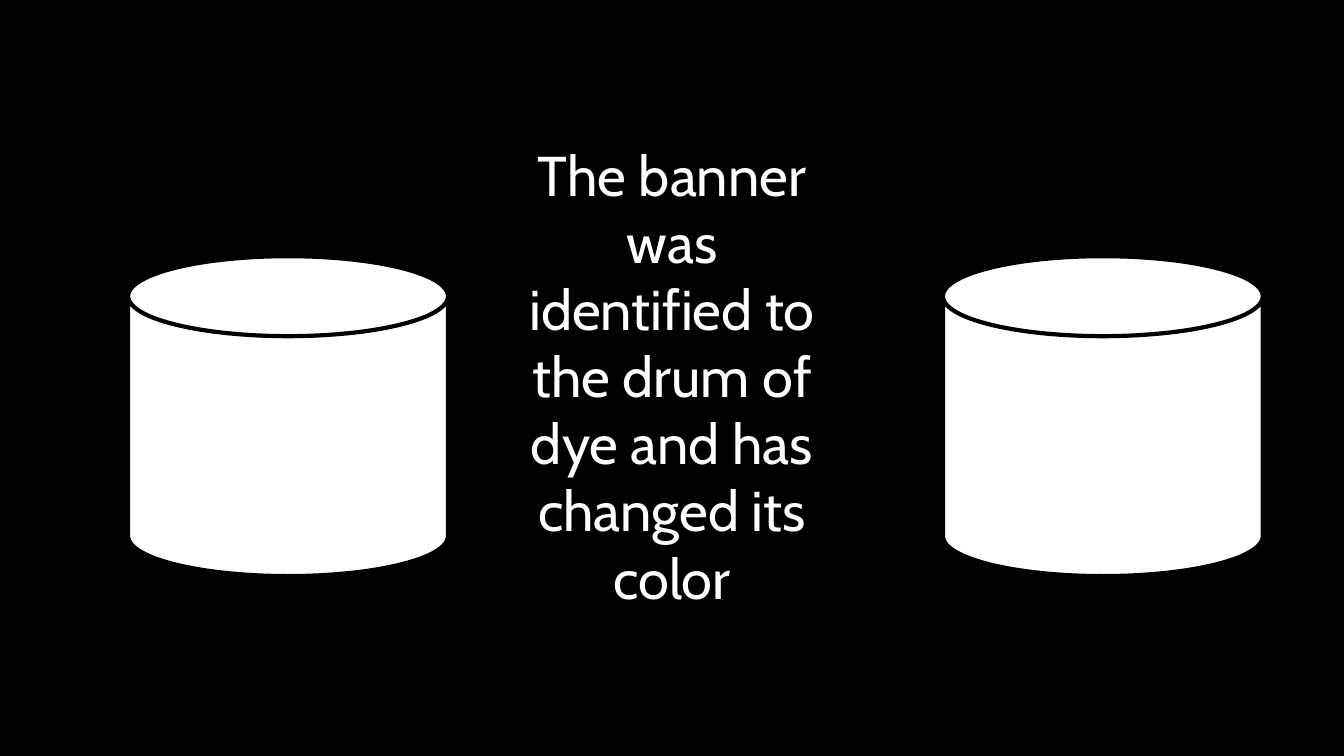
from pptx import Presentation
from pptx.dml.color import RGBColor
from pptx.enum.shapes import MSO_SHAPE
from pptx.enum.text import MSO_AUTO_SIZE, PP_ALIGN
from pptx.util import Pt

BLACK, WHITE = "000000", "FFFFFF"


def rgb(hex_color):
    return RGBColor.from_string(hex_color)


class SlideBuilder:
    font = "Cabin"
    text_size = 40
    outline = 3

    def __init__(self, s):
        self.s = s

    def background(self, color):
        fill = self.s.background.fill
        fill.solid()
        fill.fore_color.rgb = rgb(color)

    def drum(self, x, y, size):
        sp = self.s.shapes.add_shape(
            MSO_SHAPE.CAN, Pt(x), Pt(y), Pt(size), Pt(size))
        sp.adjustments[0] = 0.25
        sp.shadow.inherit = False
        sp.fill.solid()
        sp.fill.fore_color.rgb = rgb(WHITE)
        sp.line.color.rgb = rgb(BLACK)
        sp.line.width = Pt(self.outline)

    def text(self, x, y, w, h, text):
        tf = self.s.shapes.add_textbox(Pt(x), Pt(y), Pt(w), Pt(h)).text_frame
        tf.word_wrap = True
        tf.auto_size = MSO_AUTO_SIZE.SHAPE_TO_FIT_TEXT
        p = tf.paragraphs[0]
        p.text = text
        p.alignment = PP_ALIGN.CENTER
        p.font.name = self.font
        p.font.size = Pt(self.text_size)
        p.font.color.rgb = rgb(WHITE)


def main():
    prs = Presentation()
    prs.slide_width, prs.slide_height = Pt(960), Pt(540)
    slide = SlideBuilder(prs.slides.add_slide(prs.slide_layouts[6]))

    slide.background(BLACK)
    for x in (91.5, 673.5):
        slide.drum(x, 183, 228.5)
    slide.text(363, 96.5, 234, 346.5,
               "The banner was identified to the drum of dye "
               "and has changed its color")

    prs.save("out.pptx")


if __name__ == "__main__":
    main()
